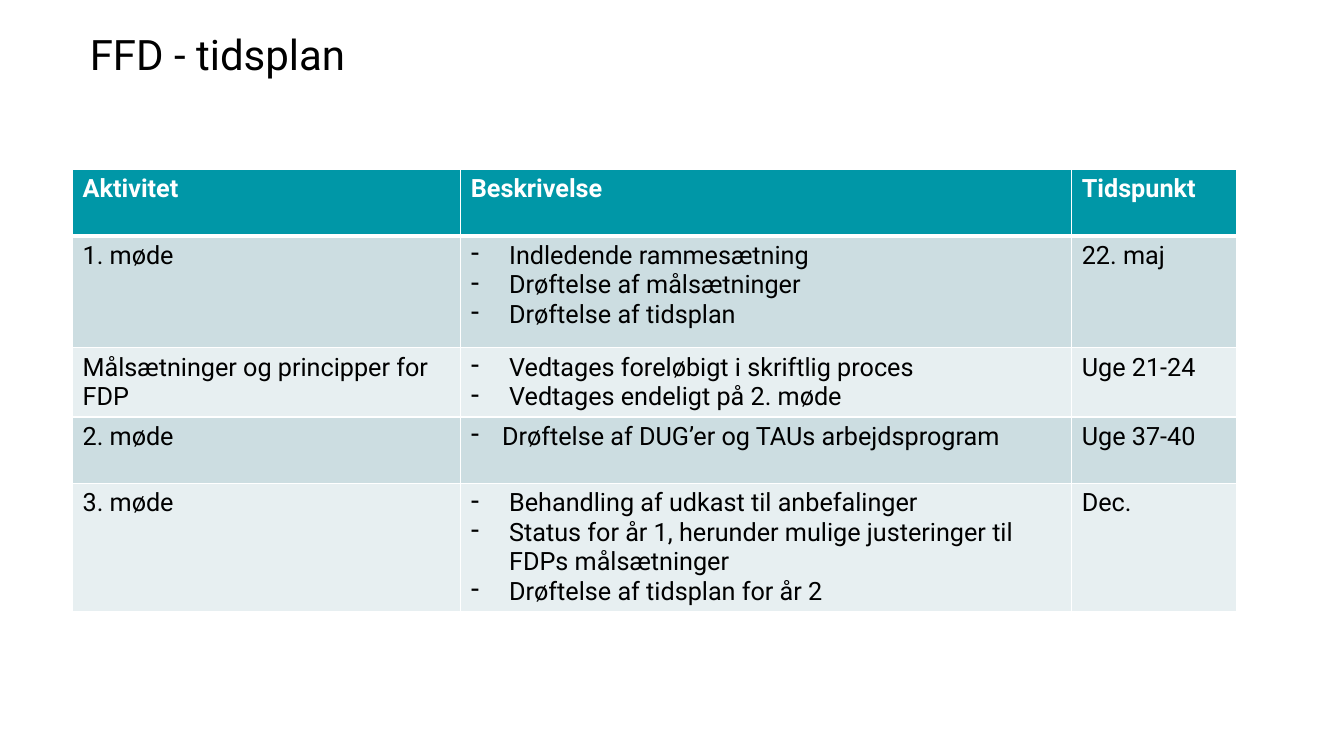
from lxml import etree
from pptx import Presentation
from pptx.dml.color import RGBColor
from pptx.enum.text import MSO_ANCHOR, MSO_AUTO_SIZE, PP_ALIGN
from pptx.oxml.ns import qn
from pptx.util import Inches, Pt

LEFT = PP_ALIGN.LEFT
TOP = MSO_ANCHOR.TOP
NO_AUTOFIT = MSO_AUTO_SIZE.NONE

# Content: a list in a cell is bulleted
TITLE = "FFD - tidsplan"
HEADER = ("Aktivitet", "Beskrivelse", "Tidspunkt")
ACTIVITIES = [
    ("1. møde",
     ["Indledende rammesætning", "Drøftelse af målsætninger", "Drøftelse af tidsplan"],
     "22. maj"),
    ("Målsætninger og principper for FDP",
     ["Vedtages foreløbigt i skriftlig proces", "Vedtages endeligt på 2. møde"],
     "Uge 21-24"),
    ("2. møde",
     ["Drøftelse af DUG’er og TAUs arbejdsprogram"],
     "Uge 37-40"),
    ("3. møde",
     ["Behandling af udkast til anbefalinger",
      "Status for år 1, herunder mulige justeringer til FDPs målsætninger",
      "Drøftelse af tidsplan for år 2"],
     "Dec."),
]

# Style
FONT = "Roboto"
COLORS = {"header": "0097A7", "odd": "CCDDE1", "even": "E7EFF1",
          "white": "FFFFFF", "black": "000000"}
COLUMN_WIDTHS = (3.85, 6.06, 1.63)
ROW_HEIGHTS = (0.66, 1.11, 0.68, 0.66, 1.27)
LIST_INDENT, SINGLE_INDENT = 0.38, 0.31


def add_text(paragraph, text, size, color, bold=False):
    run = paragraph.add_run()
    run.text = text
    run.font.name = FONT
    run.font.size = Pt(size)
    run.font.bold = bold
    run.font.color.rgb = RGBColor.from_string(COLORS[color])


def add_dash(paragraph, indent):
    properties = paragraph._p.get_or_add_pPr()
    properties.set("marL", str(Inches(indent)))
    properties.set("indent", str(-Inches(indent)))
    etree.SubElement(properties, qn("a:buChar")).set("char", "-")


def add_borders(cell, widths):
    properties = cell._tc.get_or_add_tcPr()
    for side, width in widths.items():
        line = etree.SubElement(properties, qn("a:ln" + side), w=str(Pt(width)))
        fill = etree.SubElement(line, qn("a:solidFill"))
        etree.SubElement(fill, qn("a:srgbClr"), val=COLORS["white"])


def fill_cell(cell, content, row_index):
    is_header = row_index == 0
    add_borders(cell, {"L": 1, "R": 1, "T": 3 if row_index == 1 else 1,
                       "B": 3 if is_header else 1})
    fill_name = "header" if is_header else ("even", "odd")[row_index % 2]
    cell.fill.solid()
    cell.fill.fore_color.rgb = RGBColor.from_string(COLORS[fill_name])

    is_list = isinstance(content, list)
    items = content if is_list else [content]
    frame = cell.text_frame
    for index, item in enumerate(items):
        paragraph = frame.add_paragraph() if index else frame.paragraphs[0]
        if is_list:
            add_dash(paragraph, LIST_INDENT if len(items) > 1 else SINGLE_INDENT)
        add_text(paragraph, item, 18, "white" if is_header else "black", is_header)


presentation = Presentation()
presentation.slide_width = Inches(13.33)
presentation.slide_height = Inches(7.5)
slide = presentation.slides.add_slide(presentation.slide_layouts[5])

# Title
title = slide.shapes.title
title.left, title.top = Inches(0.79), Inches(0.23)
title.width, title.height = Inches(4.12), Inches(0.61)
title_frame = title.text_frame
title_frame.auto_size = NO_AUTOFIT
title_frame.vertical_anchor = TOP
title_frame.paragraphs[0].alignment = LEFT
add_text(title_frame.paragraphs[0], TITLE, 30, "black")

# Schedule table
rows = [HEADER, *ACTIVITIES]
table = slide.shapes.add_table(
    len(rows), len(HEADER), Inches(0.72), Inches(1.68),
    Inches(sum(COLUMN_WIDTHS)), Inches(sum(ROW_HEIGHTS))).table
for column, width in zip(table.columns, COLUMN_WIDTHS):
    column.width = Inches(width)
for row_index, (contents, height) in enumerate(zip(rows, ROW_HEIGHTS)):
    table.rows[row_index].height = Inches(height)
    for column_index, content in enumerate(contents):
        fill_cell(table.cell(row_index, column_index), content, row_index)

presentation.save("out.pptx")
